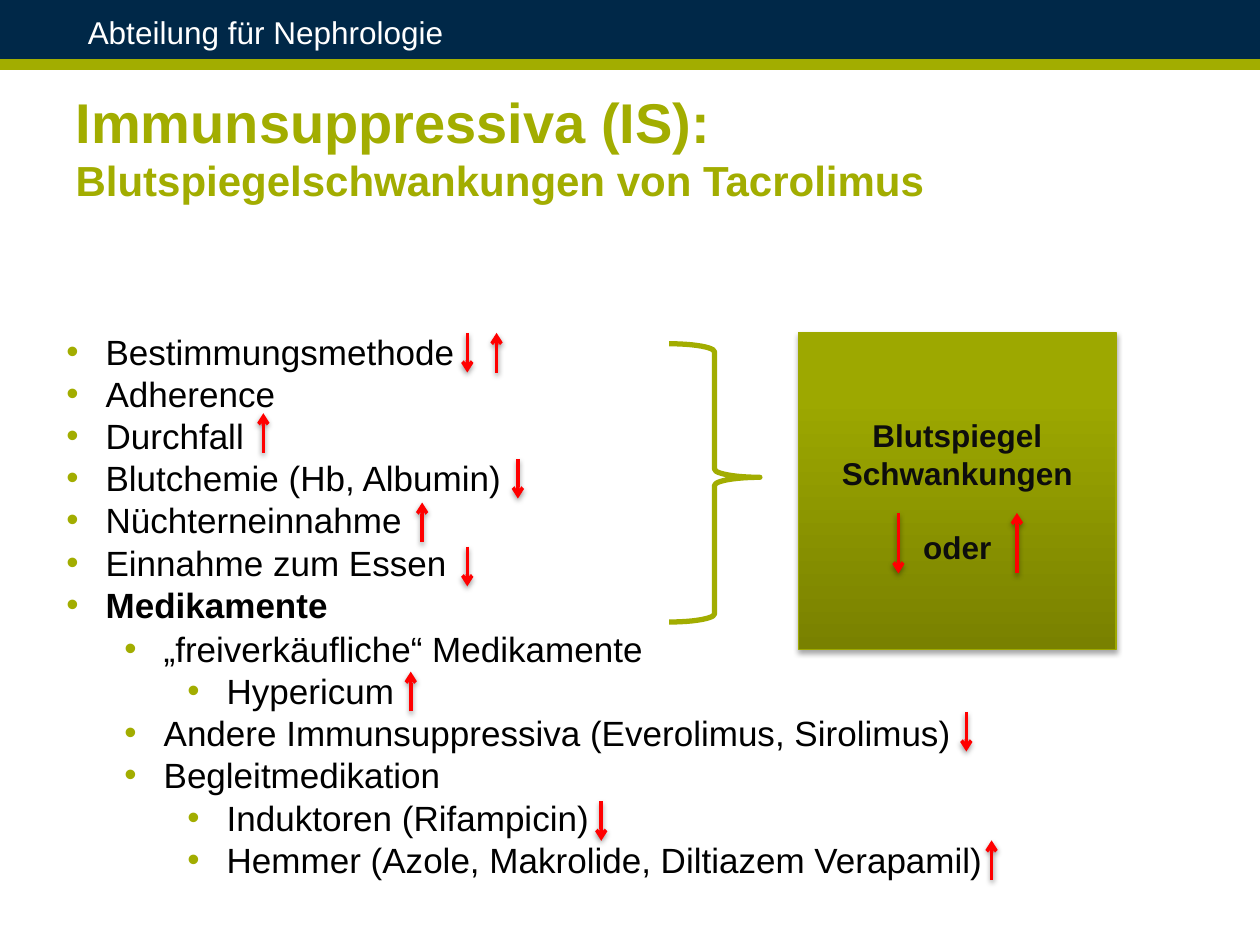
from copy import deepcopy
from dataclasses import dataclass

from lxml.etree import SubElement
from pptx import Presentation
from pptx.dml.color import RGBColor as RGB
from pptx.enum.shapes import MSO_CONNECTOR as LINK, MSO_SHAPE as KIND
from pptx.enum.text import MSO_ANCHOR as ANCHOR, MSO_AUTO_SIZE as AUTO, PP_ALIGN as ALIGN
from pptx.oxml.ns import qn
from pptx.util import Cm, Pt


@dataclass(frozen=True)
class Theme:
    face: str = "Arial"
    navy: str = "002848"
    green: str = "A2AD00"
    edge: str = "9EA900"
    shades: tuple = ((0, "798100"), (0.8, "9DA800"), (1, "9EA800"))
    red: str = "FF0000"
    white: str = "FFFFFF"
    black: str = "000000"
    dark: str = "0D0D0D"
    head: int = 32
    sub: int = 24
    body: int = 20
    small: int = 18


T = Theme()


def style(para, size, color, bold=False):
    font = para.font
    font.name, font.size, font.bold = T.face, Pt(size), bold
    font.color.rgb = RGB.from_string(color)


def shade(shape, alpha, dist):
    """Add a soft shadow that falls straight down."""
    effects = SubElement(shape._element.spPr, qn("a:effectLst"))
    outer = SubElement(effects, qn("a:outerShdw"), blurRad=str(Pt(3.1)),
                       dist=str(Pt(dist)), dir="5400000", rotWithShape="0")
    color = SubElement(outer, qn("a:srgbClr"), val=T.black)
    SubElement(color, qn("a:alpha"), val=str(alpha * 1000))


prs = Presentation()
prs.slide_width, prs.slide_height = Cm(25.4), Cm(19.05)
slide = prs.slides.add_slide(prs.slide_layouts[5])
shapes = slide.shapes

# Header band
band = shapes.add_shape(KIND.RECTANGLE, 0, 0, Cm(25.4), Cm(1.3))
band.shadow.inherit = False
band.fill.solid()
band.fill.fore_color.rgb = RGB.from_string(T.navy)
band.line.fill.background()

rule = shapes.add_connector(LINK.STRAIGHT, 0, Cm(1.3), Cm(25.4), Cm(1.3))
rule.line.color.rgb = RGB.from_string(T.green)
rule.line.width = Pt(6)
SubElement(rule._element.spPr, qn("a:effectLst"))

unit = shapes.add_textbox(Cm(1.52), Cm(0.13), Cm(16.74), Cm(0.64)).text_frame
unit.word_wrap = True
unit.text = "Abteilung für Nephrologie"
style(unit.paragraphs[0], T.small, T.white)

# Title
title = shapes.title
title.left, title.top, title.width, title.height = Cm(1.27), Cm(2.36), Cm(22.86), Cm(2.16)
frame = title.text_frame
frame.auto_size = AUTO.NONE
frame.vertical_anchor = ANCHOR.MIDDLE
frame.margin_bottom = Cm(1.1)
frame.text = "Immunsuppressiva (IS):\nBlutspiegelschwankungen von Tacrolimus"
for para, size in zip(frame.paragraphs, (T.head, T.sub)):
    para.alignment = ALIGN.LEFT
    style(para, size, T.green, True)

# Brace
brace = shapes.add_shape(KIND.RIGHT_BRACE, Cm(13.49), Cm(6.93), Cm(1.83), Cm(5.61))
brace.adjustments[0], brace.adjustments[1] = 0.09, 0.48
brace.shadow.inherit = False
brace.fill.background()
brace.line.color.rgb = RGB.from_string(T.green)
brace.line.width = Pt(3)

# Bullet lists: left, top, width, then (level, text)
causes = [(0, text) for text in (
    "Bestimmungsmethode", "Adherence", "Durchfall", "Blutchemie (Hb, Albumin)",
    "Nüchterneinnahme", "Einnahme zum Essen", "Medikamente")]
drugs = [
    (0, "„freiverkäufliche“ Medikamente"),
    (1, "Hypericum"),
    (0, "Andere Immunsuppressiva (Everolimus, Sirolimus)"),
    (0, "Begleitmedikation"),
    (1, "Induktoren (Rifampicin)"),
    (1, "Hemmer (Azole, Makrolide, Diltiazem Verapamil)"),
]
for left, top, width, items in ((1.09, 6.53, 9.35, causes), (2.26, 12.52, 18.1, drugs)):
    frame = shapes.add_textbox(Cm(left), Cm(top), Cm(width), Cm(6.25)).text_frame
    frame.word_wrap = True
    frame.text = "\n".join(text for _, text in items)
    for para, (level, text) in zip(frame.paragraphs, items):
        para.level = level
        para.line_spacing = Pt(24.1)
        props = para._p.get_or_add_pPr()
        props.set("marL", str(Cm(0.79 + 1.27 * level)))
        props.set("indent", str(Cm(-0.79)))
        color = SubElement(props, qn("a:buClr"))
        SubElement(color, qn("a:srgbClr"), val=T.green)
        SubElement(props, qn("a:buFont"), typeface=T.face)
        SubElement(props, qn("a:buChar"), char="•")
        style(para, T.body, T.black, text == "Medikamente")

# Result box
box = shapes.add_shape(KIND.RECTANGLE, Cm(16.1), Cm(6.7), Cm(6.4), Cm(6.4))
box.fill.gradient()
box.fill.gradient_angle = 90
stops = box._element.spPr.find(qn("a:gradFill")).find(qn("a:gsLst"))
stops.insert(1, deepcopy(stops[0]))
for stop, (place, color) in zip(box.fill.gradient_stops, T.shades):
    stop.position = place
    stop.color.rgb = RGB.from_string(color)
box.line.color.rgb = RGB.from_string(T.edge)
box.line.width = Pt(0.75)
shade(box, 35, 1.8)
frame = box.text_frame
frame.vertical_anchor = ANCHOR.MIDDLE
frame.text = "Blutspiegel\nSchwankungen\noder"
for para in frame.paragraphs:
    para.alignment = ALIGN.CENTER
    style(para, T.small, T.dark, True)
frame.paragraphs[2].space_before = Pt(21)

# Trend arrows: centre, top, length, direction
SHORT, LONG = 0.8, 1.22
arrows = [
    (18.11, 10.34, LONG, "down"), (20.5, 10.34, LONG, "up"),
    (9.42, 6.71, SHORT, "down"), (10.01, 6.71, SHORT, "up"),
    (5.31, 8.33, SHORT, "up"), (10.44, 9.25, SHORT, "down"),
    (8.51, 10.13, SHORT, "up"), (9.42, 11.02, SHORT, "down"),
    (8.28, 13.54, SHORT, "up"), (19.48, 14.35, SHORT, "down"),
    (12.12, 16.15, SHORT, "down"), (19.99, 16.94, SHORT, "up"),
]
for x, top, size, way in arrows:
    start, end = (top, top + size) if way == "down" else (top + size, top)
    arrow = shapes.add_connector(LINK.STRAIGHT, Cm(x), Cm(start), Cm(x), Cm(end))
    arrow.line.color.rgb = RGB.from_string(T.red)
    arrow.line.width = Pt(2)
    SubElement(arrow.line._get_or_add_ln(), qn("a:tailEnd"), type="arrow")
    shade(arrow, 38, 1.6)

prs.save("out.pptx")
